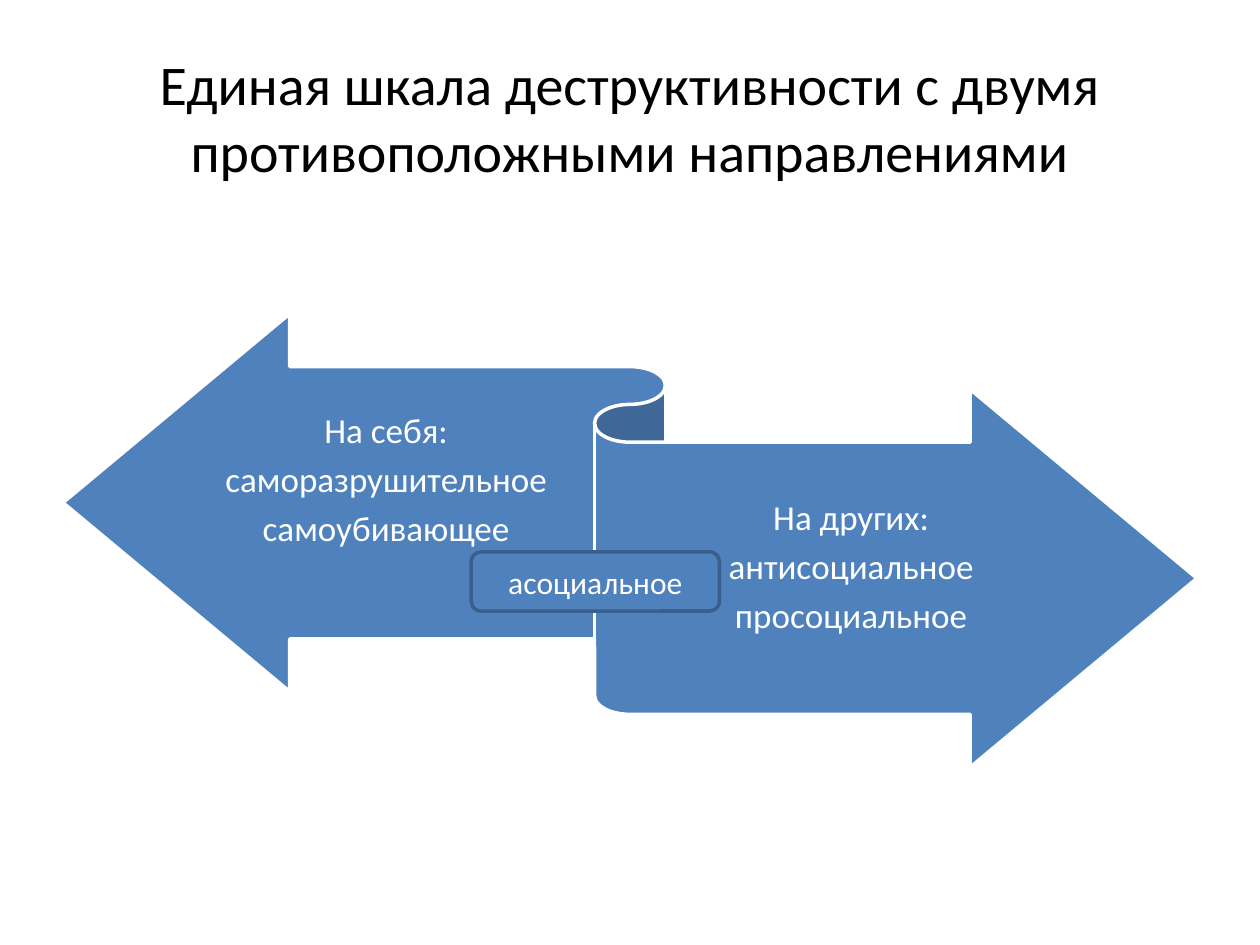
import pptx
import pptx.util
import pptx.dml.color
import pptx.enum.shapes
import pptx.enum.text

Inches = pptx.util.Inches
Pt = pptx.util.Pt
MSO_SHAPE = pptx.enum.shapes.MSO_SHAPE
COLORS = {"blue": "4F81BD", "outline": "3A5F8C", "white": "FFFFFF", "black": "000000"}


def add_line(paragraph, text, size, color):
    paragraph.alignment = pptx.enum.text.PP_ALIGN.CENTER
    run = paragraph.add_run()
    run.text = text
    run.font.name = "Calibri"
    run.font.size = Pt(size)
    run.font.color.rgb = pptx.dml.color.RGBColor.from_string(COLORS[color])


def add_blue_shape(shapes, preset, left, top, width, height, line_color):
    shape = shapes.add_shape(preset, Inches(left), Inches(top), Inches(width), Inches(height))
    shape.shadow.inherit = False
    shape.fill.solid()
    shape.fill.fore_color.rgb = pptx.dml.color.RGBColor.from_string(COLORS["blue"])
    shape.line.color.rgb = pptx.dml.color.RGBColor.from_string(COLORS[line_color])
    shape.line.width = Pt(2)
    return shape


presentation = pptx.Presentation()
presentation.slide_width = Inches(10)
presentation.slide_height = Inches(7.5)
slide = presentation.slides.add_slide(presentation.slide_layouts[5])

title = slide.shapes.title
title.left, title.top = Inches(0.5), Inches(0.3)
title.width, title.height = Inches(9), Inches(1.25)
title.text_frame.vertical_anchor = pptx.enum.text.MSO_ANCHOR.MIDDLE
add_line(
    title.text_frame.paragraphs[0],
    "Единая шкала деструктивности с двумя противоположными направлениями",
    32,
    "black",
)

scale = slide.shapes.add_group_shape()
ribbon = add_blue_shape(scale.shapes, MSO_SHAPE.LEFT_RIGHT_RIBBON, 0.5, 2.49, 9, 3.6, "white")
ribbon.adjustments[0] = 0.6

directions = [
    (1.58, 3.05, 2.97, 0.3, ["На себя:", "саморазрушительное", "самоубивающее"]),
    (5, 3.63, 3.51, 0.08, ["На других:", "антисоциальное", "просоциальное"]),
]
for left, top, width, bottom_margin, lines in directions:
    box = scale.shapes.add_textbox(Inches(left), Inches(top), Inches(width), Inches(1.76))
    frame = box.text_frame
    frame.word_wrap = True
    frame.vertical_anchor = pptx.enum.text.MSO_ANCHOR.MIDDLE
    frame.margin_left = frame.margin_right = 0
    frame.margin_top = Inches(0.08)
    frame.margin_bottom = Inches(bottom_margin)
    for index, text in enumerate(lines):
        paragraph = frame.add_paragraph() if index else frame.paragraphs[0]
        paragraph.line_spacing = 0.9
        paragraph.space_after = Pt(6.6)
        add_line(paragraph, text, 20, "white")

label = add_blue_shape(
    slide.shapes, MSO_SHAPE.ROUNDED_RECTANGLE, 3.74, 4.38, 1.97, 0.47, "outline"
)
label.text_frame.vertical_anchor = pptx.enum.text.MSO_ANCHOR.MIDDLE
add_line(label.text_frame.paragraphs[0], "асоциальное", 18, "white")

presentation.save("out.pptx")
